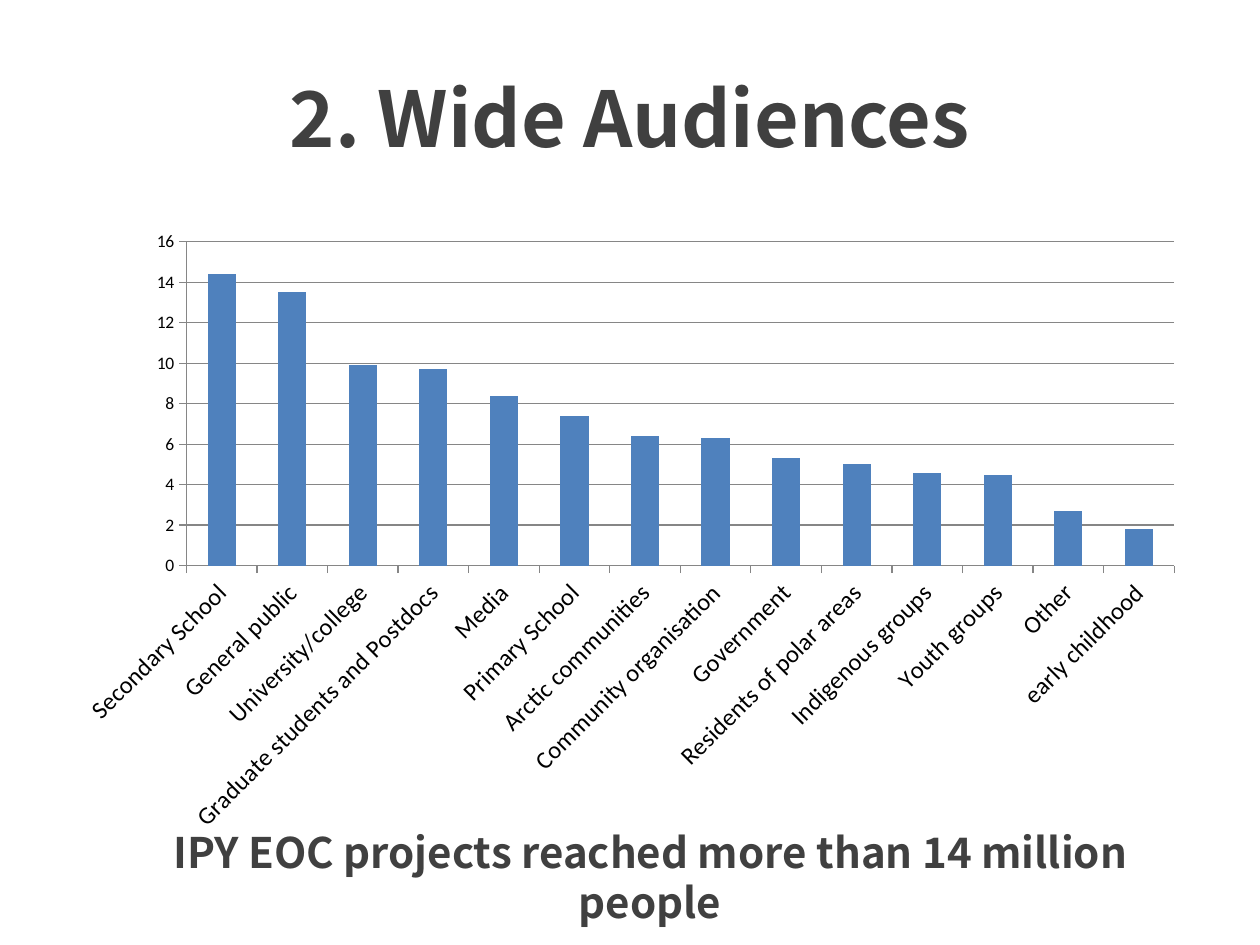
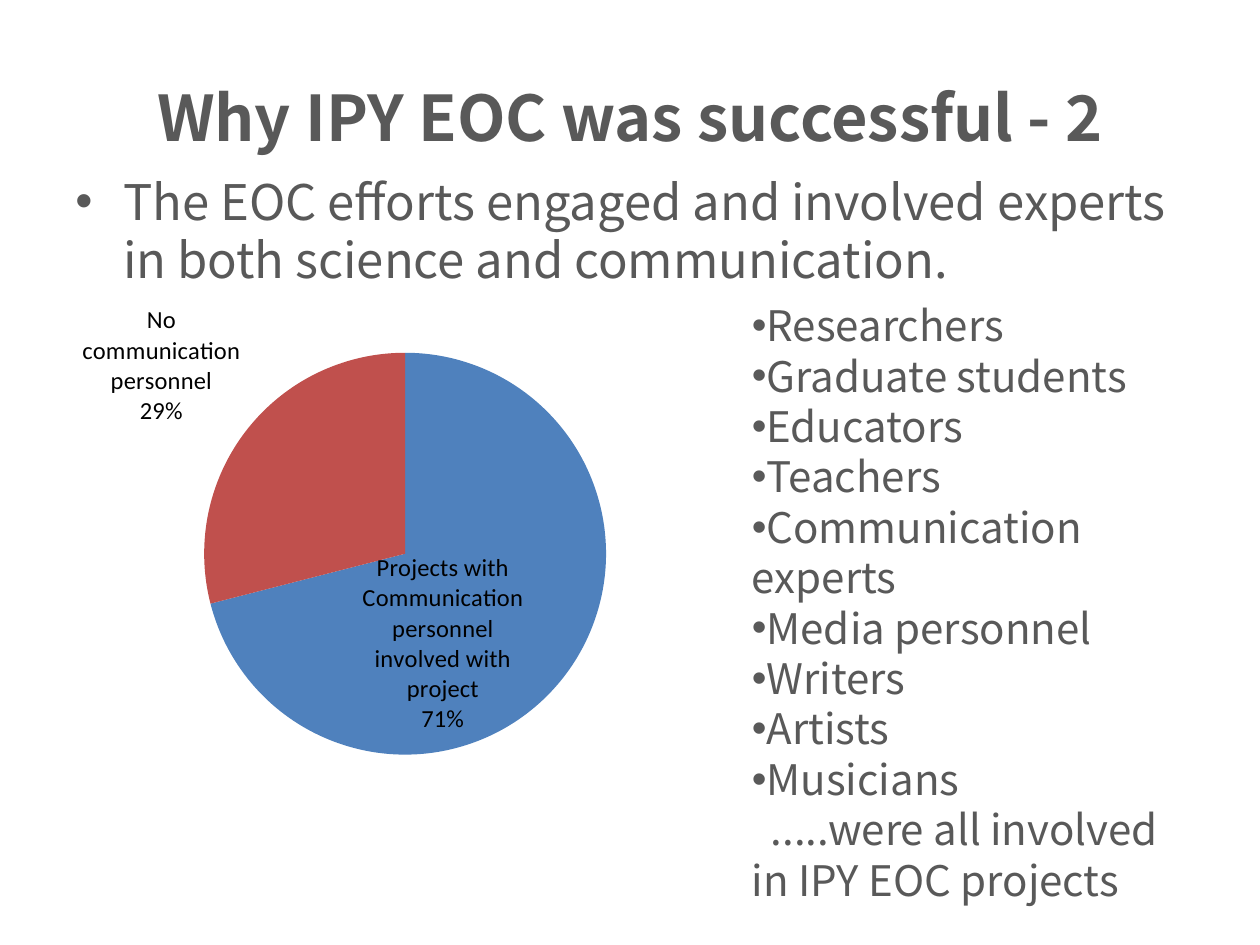
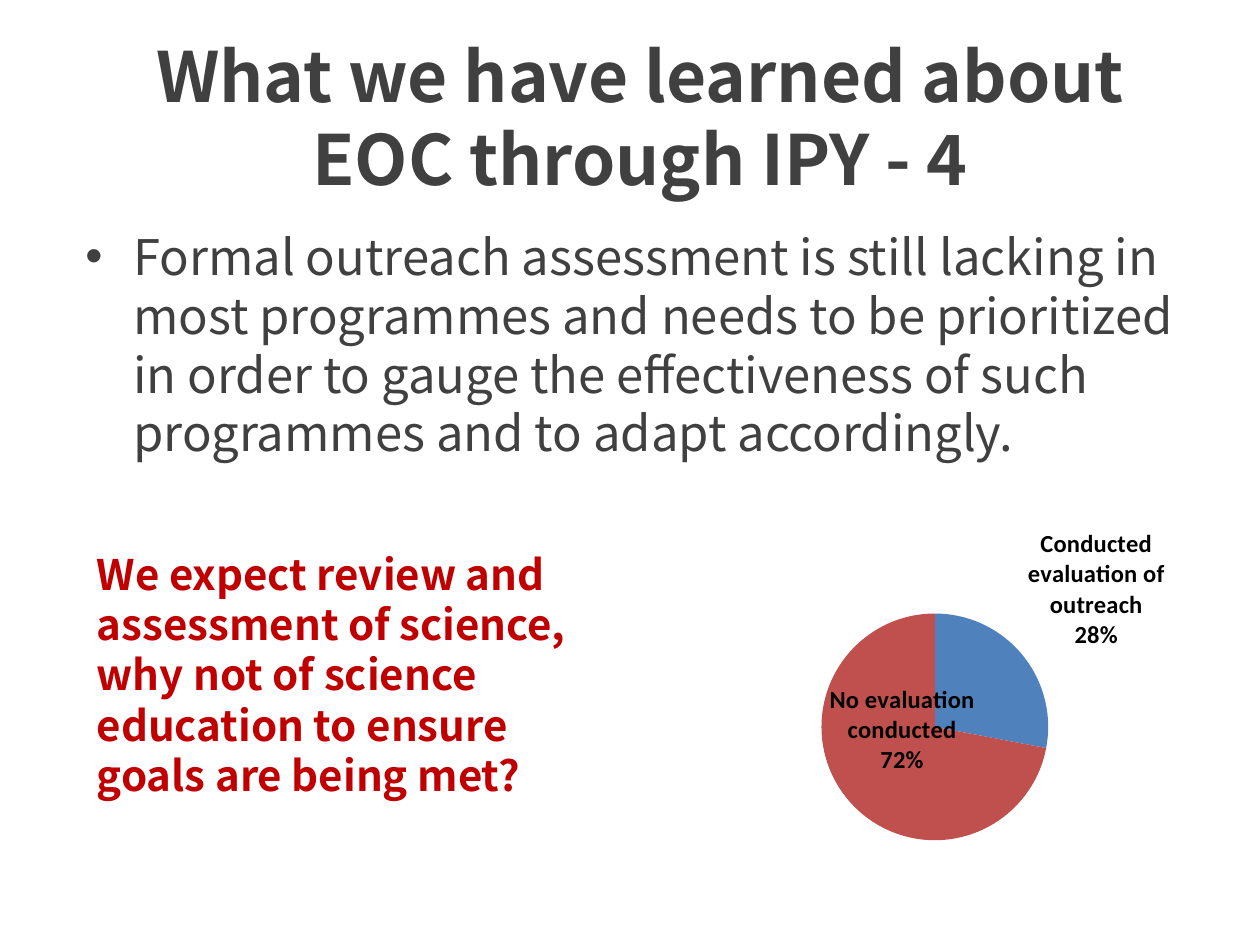
from copy import deepcopy

from lxml import etree
from pptx import Presentation
from pptx.chart.data import CategoryChartData
from pptx.dml.color import RGBColor
from pptx.enum.chart import XL_CHART_TYPE, XL_LABEL_POSITION, XL_TICK_MARK
from pptx.enum.text import MSO_ANCHOR, PP_ALIGN
from pptx.oxml import parse_xml
from pptx.oxml.ns import nsdecls, qn
from pptx.util import Inches, Pt

COLORS = {
    "dark": "404040",
    "gray": "595959",
    "alert": "C00000",
    "black": "000000",
    "line": "868686",
    "blue": "4F81BD",
    "red": "C0504D",
}
TEXT_FONT = "Noto Sans CJK KR"
CHART_FONT = "Calibri"
LINE_HEIGHT = 1.2

AUDIENCES = {
    "Secondary School": 14.4,
    "General public": 13.5,
    "University/college": 9.9,
    "Graduate students and Postdocs": 9.7,
    "Media": 8.4,
    "Primary School": 7.4,
    "Arctic communities": 6.4,
    "Community organisation": 6.3,
    "Government": 5.3,
    "Residents of polar areas": 5,
    "Indigenous groups": 4.6,
    "Youth groups": 4.5,
    "Other": 2.7,
    "early childhood": 1.8,
}
PERSONNEL = {
    "Projects with Communication personnel involved with project": 71,
    "No communication personnel": 29,
}
EVALUATION = {
    "Conducted evaluation of outreach": 28,
    "No evaluation conducted": 72,
}
EXPERTS = [
    "Researchers", "Graduate students", "Educators", "Teachers",
    "Communication experts", "Media personnel", "Writers", "Artists", "Musicians",
]


def rgb(name):
    return RGBColor.from_string(COLORS[name])


def style_font(font, size, color="black", bold=False, face=CHART_FONT):
    font.name = face
    font.size = Pt(size)
    font.bold = bold
    font.color.rgb = rgb(color)


# Text

def indent_paragraph(paragraph, hanging=0, first=0, bullet=False):
    properties = paragraph._p.get_or_add_pPr()
    properties.set("marL", str(Inches(hanging)))
    properties.set("indent", str(Inches(first - hanging)))
    if bullet:
        etree.SubElement(properties, qn("a:buFont")).set("typeface", "Arial")
        etree.SubElement(properties, qn("a:buChar")).set("char", "•")


def add_text(slide, text, box, size=24, color="dark", bold=False,
             align=PP_ALIGN.LEFT, anchor=MSO_ANCHOR.TOP, bullet=False,
             hanging=0, closing=None):
    """Write one paragraph per line; closing is a last one without a bullet."""
    frame = slide.shapes.add_textbox(*map(Inches, box)).text_frame
    frame.word_wrap = True
    frame.vertical_anchor = anchor
    lines = text.split("\n") + ([closing] if closing else [])
    for number, line in enumerate(lines):
        paragraph = frame.add_paragraph() if number else frame.paragraphs[0]
        if closing and line == closing:
            indent_paragraph(paragraph, first=0.15)
        elif bullet:
            indent_paragraph(paragraph, hanging, bullet=True)
        paragraph.alignment = align
        paragraph.line_spacing = Pt(round(size * LINE_HEIGHT, 1))
        run = paragraph.add_run()
        run.text = line
        style_font(run.font, size, color, bold, TEXT_FONT)


def add_title(slide, text, size, color="dark", left=0.5):
    add_text(slide, text, (left, 0.3, 9, 1.25), size=size, color=color, bold=True,
             align=PP_ALIGN.CENTER, anchor=MSO_ANCHOR.MIDDLE)


def add_statement(slide, text, box, color="dark"):
    add_text(slide, text, box, size=28, color=color, bullet=True, hanging=0.38)


# Charts

def add_data_chart(slide, kind, values, box, plot_box):
    """Add a one-series chart; plot_box is the plot's place on the slide."""
    data = CategoryChartData()
    data.categories = list(values)
    data.add_series("Series 1", list(values.values()))
    chart = slide.shapes.add_chart(kind, *map(Inches, box), data).chart
    chart.has_legend = False
    chart.has_title = False
    style_font(chart.font, 10)

    left, top, width, height = box
    plot_left, plot_top, plot_width, plot_height = plot_box
    shares = {
        "x": (plot_left - left) / width,
        "y": (plot_top - top) / height,
        "w": plot_width / width,
        "h": plot_height / height,
    }
    modes = '<c:xMode val="edge"/><c:yMode val="edge"/>'
    sizes = "".join(f'<c:{key} val="{share:.4f}"/>' for key, share in shares.items())
    layout = parse_xml(
        f'<c:layout {nsdecls("c")}><c:manualLayout><c:layoutTarget val="inner"/>'
        f"{modes}{sizes}</c:manualLayout></c:layout>")
    plot_area = chart._chartSpace.chart.plotArea
    for default in plot_area.findall(qn("c:layout")):
        plot_area.remove(default)
    plot_area.insert(0, layout)
    return chart


def add_audience_chart(slide, values, box, plot_box):
    chart = add_data_chart(slide, XL_CHART_TYPE.COLUMN_CLUSTERED, values, box, plot_box)
    plot = chart.plots[0]
    plot.gap_width = 150
    plot.vary_by_categories = False
    bars = plot.series[0].format.fill
    bars.solid()
    bars.fore_color.rgb = rgb("blue")

    scale, audiences = chart.value_axis, chart.category_axis
    scale.minimum_scale, scale.maximum_scale, scale.major_unit = 0, 16, 2
    scale.has_major_gridlines = True
    for axis, size in ((scale, 10), (audiences, 14)):
        axis.major_tick_mark = XL_TICK_MARK.OUTSIDE
        axis.minor_tick_mark = XL_TICK_MARK.NONE
        style_font(axis.tick_labels.font, size)
    for ruled in (scale, audiences, scale.major_gridlines):
        ruled.format.line.color.rgb = rgb("line")
        ruled.format.line.width = Pt(0.75)
    slant = audiences._element.find(qn("c:txPr")).find(qn("a:bodyPr"))
    slant.set("rot", str(-45 * 60000))
    slant.set("vert", "horz")


def move_label(labels, number, shift):
    """Shift one slice's label by shares of the chart, keeping the shared format."""
    across, down = shift
    label = parse_xml(
        f'<c:dLbl {nsdecls("c")}><c:idx val="{number}"/><c:layout><c:manualLayout>'
        f'<c:x val="{across}"/><c:y val="{down}"/>'
        f"</c:manualLayout></c:layout></c:dLbl>")
    for part in labels._element:
        if part.tag != qn("c:showLeaderLines"):
            label.append(deepcopy(part))
    labels._element.insert(0, label)


def add_share_pie(slide, values, box, plot_box, inside, shift, bold=False):
    """Add a pie; the label of slice number inside is moved onto its slice."""
    chart = add_data_chart(slide, XL_CHART_TYPE.PIE, values, box, plot_box)
    plot = chart.plots[0]
    plot.vary_by_categories = True
    shares = plot.series[0]
    for number, color in enumerate(("blue", "red")):
        slice_fill = shares.points[number].format.fill
        slice_fill.solid()
        slice_fill.fore_color.rgb = rgb(color)

    labels = shares.data_labels
    labels.show_category_name = True
    labels.show_percentage = True
    labels.show_value = False
    labels.number_format = "0%"
    labels.number_format_is_linked = False
    labels.position = XL_LABEL_POSITION.BEST_FIT
    style_font(labels.font, 14, bold=bold)
    separator = etree.Element(qn("c:separator"))
    separator.text = "\n"
    labels._element.find(qn("c:showBubbleSize")).addnext(separator)
    move_label(labels, inside, shift)


# Slides

def build_audiences(slide):
    add_title(slide, "2. Wide Audiences", 44)
    add_audience_chart(slide, AUDIENCES, (0.5, 1.75, 9, 4.95), (1.48, 1.92, 7.84, 2.57))
    add_text(slide, "IPY EOC projects reached more than 14 million people",
             (0.83, 6.51, 8.66, 0.9), bold=True, align=PP_ALIGN.CENTER)


def build_success(slide):
    add_title(slide, "Why IPY EOC was successful - 2", 36, color="gray")
    add_statement(slide, "The EOC efforts engaged and involved experts in both "
                  "science and communication.", (0.5, 1.31, 9, 1.1), color="gray")
    add_share_pie(slide, PERSONNEL, (-0.51, 2.1, 7.48, 5.09), (1.62, 2.8, 3.19, 3.19),
                  inside=0, shift=(-0.22, -0.2))
    add_text(slide, "\n".join(EXPERTS), (5.87, 2.33, 3.7, 5), color="gray",
             bullet=True, closing=".....were all involved in IPY EOC projects")


def build_lessons(slide):
    add_title(slide, "What we have learned about EOC through IPY - 4", 39.6, left=0.58)
    add_statement(slide, "Formal outreach assessment is still lacking in most programmes "
                  "and needs to be prioritized in order to gauge the effectiveness of "
                  "such programmes and to adapt accordingly.", (0.58, 1.75, 9, 2.16))
    add_share_pie(slide, EVALUATION, (4.45, 3.56, 5.87, 3.94), (6.52, 4.87, 1.8, 1.8),
                  inside=1, shift=(0.18, -0.24), bold=True)
    add_text(slide, "We expect review and assessment of science, why not of science "
             "education to ensure goals are being met?", (0.67, 4.3, 3.94, 2.12),
             color="alert", bold=True)


def main():
    deck = Presentation()
    deck.slide_width, deck.slide_height = Inches(10), Inches(7.5)
    for build in (build_audiences, build_success, build_lessons):
        build(deck.slides.add_slide(deck.slide_layouts[6]))
    deck.save("out.pptx")


if __name__ == "__main__":
    main()
